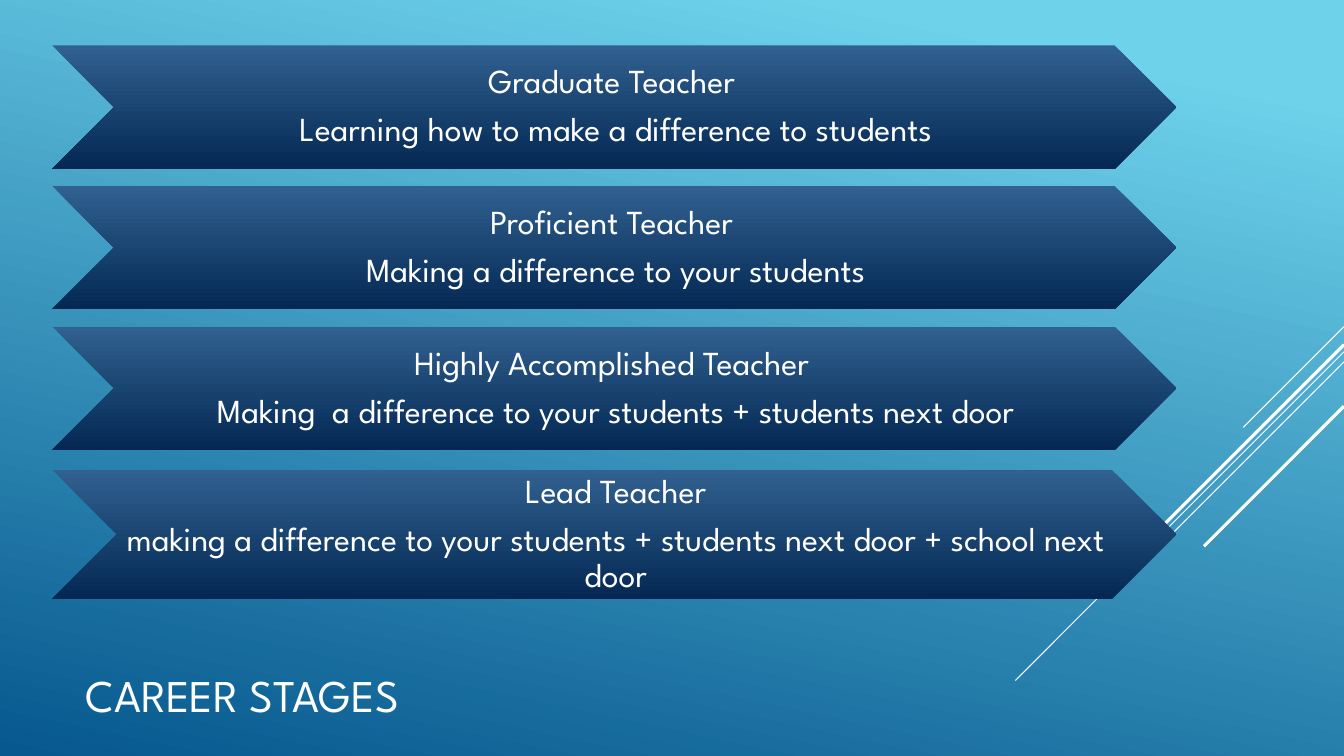
from lxml.etree import SubElement
from pptx import Presentation
from pptx.dml.color import RGBColor
from pptx.enum.shapes import MSO_CONNECTOR, MSO_SHAPE
from pptx.enum.text import MSO_ANCHOR, MSO_AUTO_SIZE, PP_ALIGN
from pptx.oxml.ns import qn
from pptx.util import Pt

FONT = "League Spartan"
COLORS = {
    "white": "FFFFFF",
    "sky": "6ED2EB",
    "ocean": "06588E",
    "steel": "316190",
    "navy": "042853",
}
SLIDE_WIDTH, SLIDE_HEIGHT = 960, 540
CHEVRON_LEFT, CHEVRON_WIDTH = 37.4, 802.8

# Top, height, stage name, what the stage is about
STAGES = [
    (32.5, 88, "Graduate Teacher ", "Learning how to make a difference to students"),
    (132.9, 88, "Proficient Teacher ", "Making a difference to your students"),
    (233.3, 88, "Highly Accomplished Teacher ",
     "Making  a difference to your students + students next door"),
    (335.5, 92.2, "Lead Teacher",
     "making a difference to your students + students next door + school next door"),
]

# Height at the right edge, run down to the left, line width
DIAGONALS = [
    (233.3, 72, 0.75),
    (251.3, 234.7, 0.75),
    (258.5, 149.2, 0.75),
    (246.2, 137.5, 2.25),
    (290.2, 100, 2.25),
]


def rgb(name):
    return RGBColor.from_string(COLORS[name])


def set_gradient(fill, angle, *stops):
    """Apply two (position, color) stops; the angle runs clockwise."""
    fill.gradient()
    fill.gradient_angle = 360 - angle
    for gradient_stop, (position, color) in zip(fill.gradient_stops, stops):
        gradient_stop.position = position
        gradient_stop.color.rgb = rgb(color)


def add_text_run(paragraph, text, size):
    run = paragraph.add_run()
    run.text = text
    run.font.name = FONT
    run.font.size = Pt(size)
    run.font.color.rgb = rgb("white")


def add_diagonal(slide, right_y, length, width):
    """Draw a 45-degree line from the right edge down to the left."""
    line = slide.shapes.add_connector(
        MSO_CONNECTOR.STRAIGHT, Pt(SLIDE_WIDTH), Pt(right_y),
        Pt(SLIDE_WIDTH - length), Pt(right_y + length))
    line.line.color.rgb = rgb("white")
    line.line.width = Pt(width)
    SubElement(line._element.spPr, qn("a:effectLst"))


def add_stage(slide, top, height, name, description):
    chevron = slide.shapes.add_shape(
        MSO_SHAPE.CHEVRON, Pt(CHEVRON_LEFT), Pt(top), Pt(CHEVRON_WIDTH), Pt(height))
    chevron.shadow.inherit = False
    set_gradient(chevron.fill, 90, (0, "steel"), (1, "navy"))
    chevron.line.fill.background()

    frame = chevron.text_frame
    frame.word_wrap = True
    frame.vertical_anchor = MSO_ANCHOR.MIDDLE
    frame.margin_left, frame.margin_right = Pt(2), Pt(0)
    frame.margin_top = frame.margin_bottom = Pt(1.3)
    for paragraph, text in ((frame.paragraphs[0], name),
                            (frame.add_paragraph(), description)):
        paragraph.alignment = PP_ALIGN.CENTER
        paragraph.line_spacing = 0.9
        paragraph.space_after = Pt(8.4)
        add_text_run(paragraph, text, 24)


def format_title(title, text):
    title.left, title.top, title.width, title.height = Pt(54), Pt(478), Pt(672), Pt(36)
    frame = title.text_frame
    frame.auto_size = MSO_AUTO_SIZE.NONE
    frame.vertical_anchor = MSO_ANCHOR.MIDDLE
    paragraph = frame.paragraphs[0]
    paragraph.alignment = PP_ALIGN.LEFT
    add_text_run(paragraph, text, 32.4)


def main():
    presentation = Presentation()
    presentation.slide_width = Pt(SLIDE_WIDTH)
    presentation.slide_height = Pt(SLIDE_HEIGHT)
    slide = presentation.slides.add_slide(
        presentation.slide_layouts.get_by_name("Title Only"))
    set_gradient(slide.background.fill, 102, (0.1, "sky"), (1, "ocean"))

    for diagonal in DIAGONALS:
        add_diagonal(slide, *diagonal)
    format_title(slide.shapes.title, "CAREER STAGES")
    for stage in STAGES:
        add_stage(slide, *stage)

    presentation.save("out.pptx")


if __name__ == "__main__":
    main()
